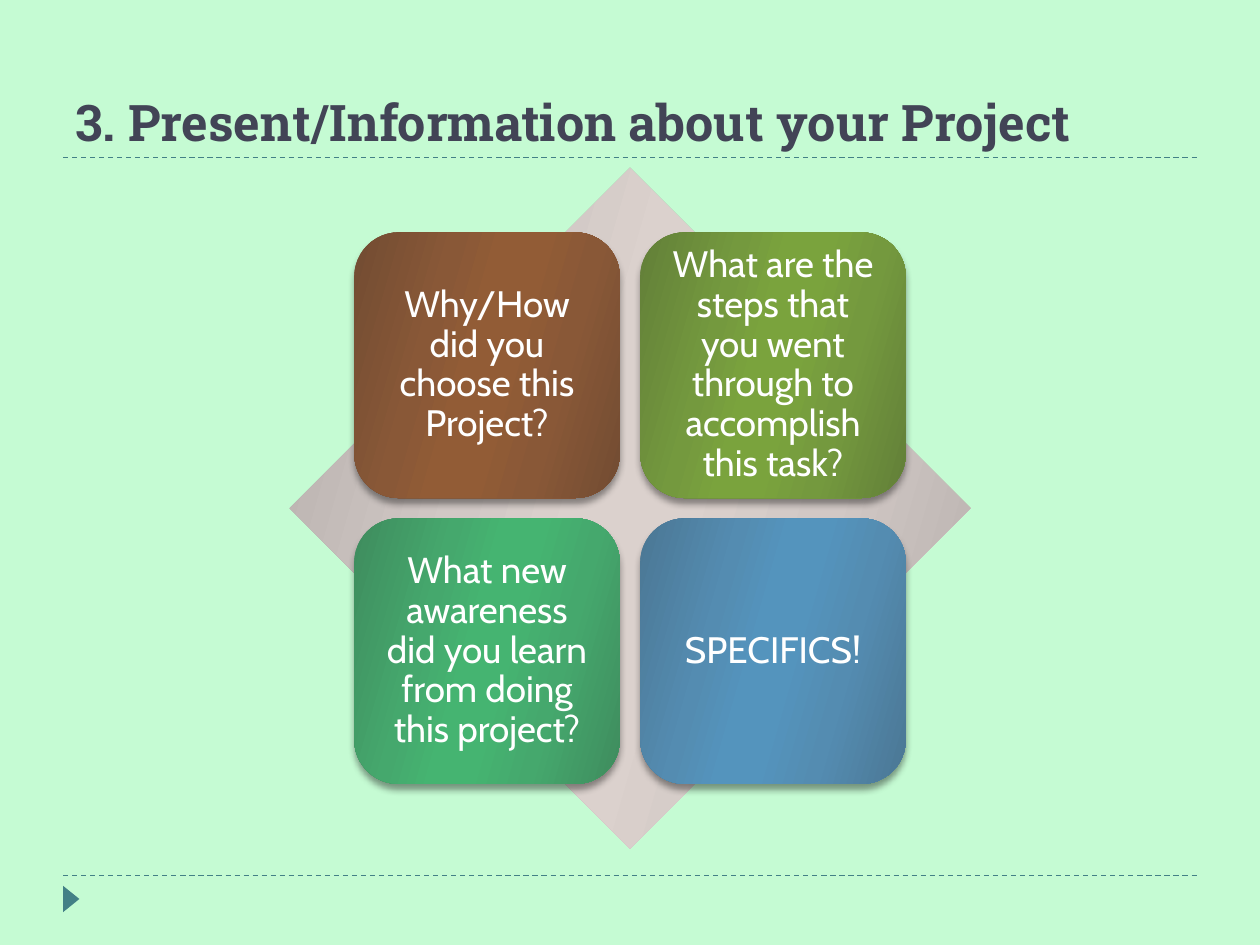
from lxml.etree import SubElement
from pptx import Presentation
from pptx.dml.color import RGBColor as RGB
from pptx.enum.dml import MSO_LINE as Dash
from pptx.enum.shapes import MSO_CONNECTOR as Conn, MSO_SHAPE as Shape
from pptx.enum.text import MSO_ANCHOR as Anchor, MSO_AUTO_SIZE as Fit, PP_ALIGN as Align
from pptx.oxml.ns import qn
from pptx.util import Pt

MINT = RGB(0xC5, 0xFB, 0xD3)
TEAL = RGB(0x43, 0x80, 0x86)
INK = RGB(0x42, 0x44, 0x56)
WHITE = RGB(0xFF, 0xFF, 0xFF)
BLACK = RGB(0x00, 0x00, 0x00)

# Gradient shades: edge, middle, core
STONE = RGB(0xB3, 0xAC, 0xA9), RGB(0xD1, 0xC8, 0xC5), RGB(0xDB, 0xD1, 0xCD)
BROWN = RGB(0x72, 0x4C, 0x32), RGB(0x89, 0x58, 0x37), RGB(0x92, 0x5C, 0x36)
OLIVE = RGB(0x62, 0x7F, 0x38), RGB(0x74, 0x99, 0x3E), RGB(0x7A, 0xA3, 0x3D)
GREEN = RGB(0x3F, 0x8C, 0x5E), RGB(0x45, 0xA8, 0x6D), RGB(0x45, 0xB4, 0x71)
BLUE = RGB(0x4B, 0x77, 0x94), RGB(0x54, 0x8C, 0xB1), RGB(0x54, 0x94, 0xBD)

HEAD = {"name": "Roboto Slab", "size": Pt(28.8), "bold": True}
BODY = {"name": "Cabin", "size": Pt(21)}
STOPS = (0, 0), (30, 1), (45, 2), (55, 2), (73, 1), (100, 0)


class Deck:
    def __init__(self, wide, high):
        self.prs = Presentation()
        self.prs.slide_width, self.prs.slide_height = Pt(wide), Pt(high)
        self.slide = self.prs.slides.add_slide(self.prs.slide_layouts[5])
        back = self.slide.background.fill
        back.solid()
        back.fore_color.rgb = MINT

    def label(self, shape, text, style, color, frame, para):
        box = shape.text_frame
        box.text = text
        first = box.paragraphs[0]
        font = first.runs[0].font
        for part, values in ((box, frame), (first, para), (font, style)):
            for key, value in values.items():
                setattr(part, key, value)
        font.color.rgb = color

    def title(self, text, *box):
        shape = self.slide.shapes.title
        shape.left, shape.top, shape.width, shape.height = map(Pt, box)
        frame = {"word_wrap": True, "auto_size": Fit.NONE, "vertical_anchor": Anchor.BOTTOM}
        self.label(shape, text, HEAD, INK, frame, {"alignment": Align.LEFT})

    def rule(self, left, right, y):
        line = self.slide.shapes.add_connector(Conn.STRAIGHT, Pt(left), Pt(y), Pt(right), Pt(y))
        line.line.color.rgb = TEAL
        line.line.width = Pt(0.75)
        line.line.dash_style = Dash.DASH
        SubElement(line._element.spPr, qn("a:effectLst"))

    def shape(self, kind, *box):
        shape = self.slide.shapes.add_shape(kind, *map(Pt, box))
        shape.shadow.inherit = False
        shape.line.fill.background()
        return shape

    def mark(self, *box):
        shape = self.shape(Shape.ISOSCELES_TRIANGLE, *box)
        shape.rotation = 90
        shape.fill.solid()
        shape.fill.fore_color.rgb = TEAL

    def sheen(self, kind, shades, *box):
        shape = self.shape(kind, *box)
        shape.fill.gradient()
        shape.fill.gradient_angle = 344  # counted anticlockwise
        stops = shape._element.spPr.find(qn("a:gradFill")).find(qn("a:gsLst"))
        stops.clear()
        for place, shade in STOPS:
            stop = SubElement(stops, qn("a:gs"), pos=str(place * 1000))
            SubElement(stop, qn("a:srgbClr"), val=str(shades[shade]))
        return shape

    def card(self, text, shades, *box):
        shape = self.sheen(Shape.ROUNDED_RECTANGLE, shades, *box)
        # Soft shadow below
        glow = SubElement(shape._element.spPr.find(qn("a:effectLst")), qn("a:outerShdw"),
                          blurRad=str(Pt(4)), dist=str(Pt(3.4)), dir="5400000", rotWithShape="0")
        tint = SubElement(glow, qn("a:srgbClr"), val=str(BLACK))
        SubElement(tint, qn("a:alpha"), val="40000")
        frame = {"word_wrap": True, "vertical_anchor": Anchor.MIDDLE}
        frame |= {"margin_" + side: Pt(6.6) for side in ("left", "top", "right", "bottom")}
        self.label(shape, text, BODY, WHITE, frame,
                   {"alignment": Align.CENTER, "line_spacing": 0.9})


def main():
    deck = Deck(720, 540)

    # Frame of the page
    for y in (500.4, 90):
        deck.rule(36, 684, y)
    deck.mark(33.12, 509.04, 15.12, 9.36)
    deck.title("3. Present/Information about your Project", 36, 12.24, 648, 77.76)

    # Diamond behind the cards
    mid_x, mid_y, span = 360, 290.4, 389
    deck.sheen(Shape.DIAMOND, STONE, mid_x - span / 2, mid_y - span / 2, span, span)

    # Two by two cards around its centre
    side, gap = 151.8, 11.6
    cards = (
        ("Why/How did you choose this Project?", BROWN),
        ("What are the steps that you went through to accomplish this task?", OLIVE),
        ("What new awareness did you learn from doing this project?", GREEN),
        ("SPECIFICS!", BLUE),
    )
    left, top = mid_x - gap / 2 - side, mid_y - gap / 2 - side
    for i, (text, shades) in enumerate(cards):
        row, col = divmod(i, 2)
        deck.card(text, shades, left + col * (side + gap), top + row * (side + gap), side, side)

    deck.prs.save("out.pptx")


if __name__ == "__main__":
    main()
